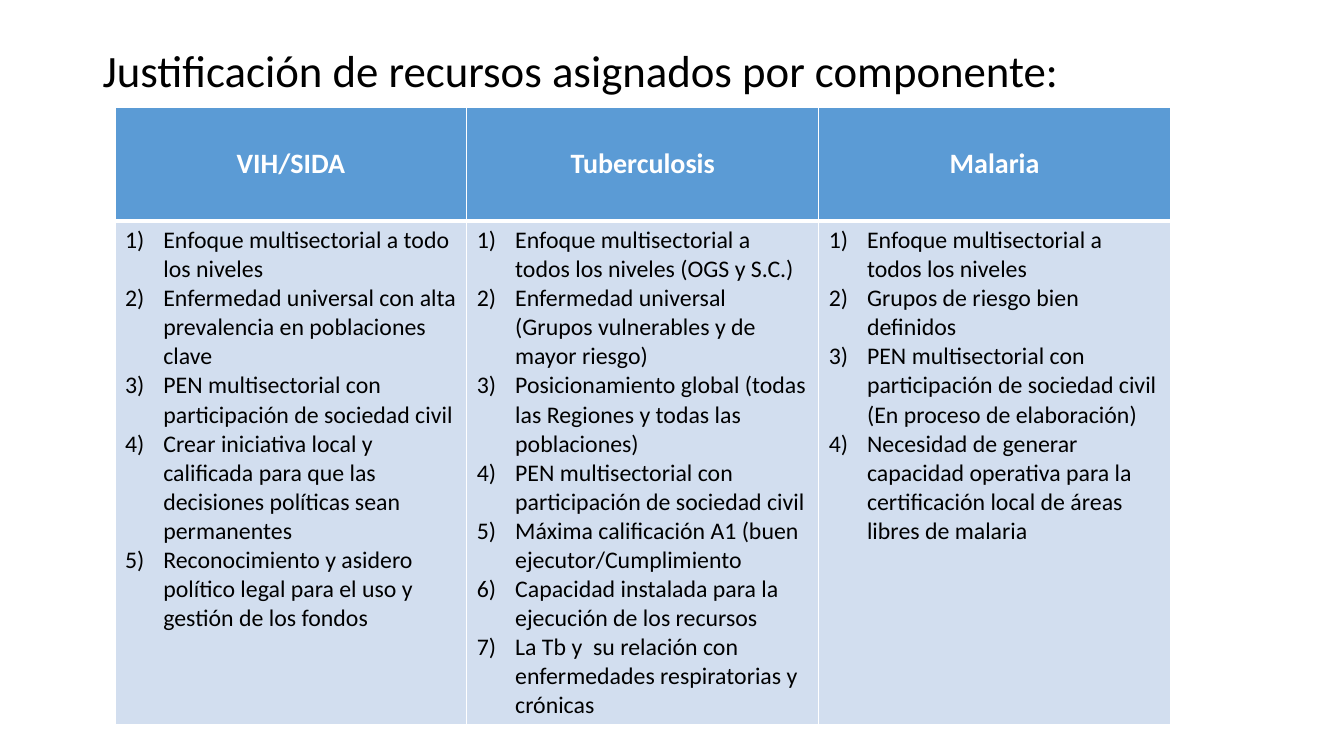
import pptx
import pptx.dml.color
import pptx.enum.text
import pptx.oxml
import pptx.oxml.ns
import pptx.util
from lxml import etree

TITLE = "Justificación de recursos asignados por componente:"
COMPONENTS = {
    "VIH/SIDA": [
        "Enfoque multisectorial a todo los niveles",
        "Enfermedad universal con alta prevalencia en poblaciones clave",
        "PEN multisectorial con participación de sociedad civil",
        "Crear iniciativa local y calificada para que las decisiones políticas sean permanentes",
        "Reconocimiento y asidero político legal para el uso y gestión de los fondos",
    ],
    "Tuberculosis": [
        "Enfoque multisectorial a todos los niveles (OGS y S.C.)",
        "Enfermedad universal (Grupos vulnerables y de mayor riesgo)",
        "Posicionamiento global (todas las Regiones y todas las poblaciones)",
        "PEN multisectorial con participación de sociedad civil",
        "Máxima calificación A1 (buen ejecutor/Cumplimiento",
        "Capacidad instalada para la ejecución de los recursos",
        "La Tb y  su relación con enfermedades respiratorias y crónicas",
    ],
    "Malaria": [
        "Enfoque multisectorial a todos los niveles",
        "Grupos de riesgo bien definidos",
        "PEN multisectorial con participación de sociedad civil (En proceso de elaboración)",
        "Necesidad de generar capacidad operativa para la certificación local de áreas libres de malaria",
    ],
}
COLORS = {"text": "000000", "white": "FFFFFF", "header": "5B9BD5", "body": "D2DEEF"}
FONT = "Calibri"
TABLE_LEFT, TABLE_TOP = 1.14, 1.07
COLUMN_WIDTH = 3.49
ROW_HEIGHTS = [1.12, 5]
NUMBER_INDENT = 0.38

inches = pptx.util.Inches
ALIGN = pptx.enum.text.PP_ALIGN
ANCHOR = pptx.enum.text.MSO_ANCHOR


def rgb(name):
    return pptx.dml.color.RGBColor.from_string(COLORS[name])


def write(frame, lines, size, color="text", bold=False, align=ALIGN.LEFT,
          numbered=False, spacing=1.0):
    """Fill a text frame with one paragraph per line."""
    frame.word_wrap = True
    for index, line in enumerate(lines):
        para = frame.add_paragraph() if index else frame.paragraphs[0]
        para.alignment = align
        para.line_spacing = spacing
        span = para.add_run()
        span.text = line
        span.font.name = FONT
        span.font.size = pptx.util.Pt(size)
        span.font.bold = bold
        span.font.color.rgb = rgb(color)
        if numbered:
            properties = para._p.get_or_add_pPr()
            indent = inches(NUMBER_INDENT)
            properties.set("marL", str(indent))
            properties.set("indent", str(-indent))
            bullet = etree.SubElement(properties, pptx.oxml.ns.qn("a:buAutoNum"))
            bullet.set("type", "arabicParenR")


def set_borders(cell, **widths):
    """Draw white borders; widths in points by side (L, R, T, B)."""
    properties = cell._tc.get_or_add_tcPr()
    for position, (side, width) in enumerate(widths.items()):
        properties.insert(position, pptx.oxml.parse_xml(
            f'<a:ln{side} {pptx.oxml.ns.nsdecls("a")} w="{pptx.util.Pt(width)}">'
            f'<a:solidFill><a:srgbClr val="{COLORS["white"]}"/></a:solidFill></a:ln{side}>'))


deck = pptx.Presentation()
deck.slide_width, deck.slide_height = inches(13.33), inches(7.5)
page = deck.slides.add_slide(deck.slide_layouts[6])

# Title
title = page.shapes.add_textbox(inches(0.92), 0, inches(11.5), inches(1.45))
title.text_frame.vertical_anchor = ANCHOR.MIDDLE
write(title.text_frame, [TITLE], size=32, spacing=0.9)

# Table of components
table = page.shapes.add_table(
    len(ROW_HEIGHTS), len(COMPONENTS), inches(TABLE_LEFT), inches(TABLE_TOP),
    inches(COLUMN_WIDTH * len(COMPONENTS)), inches(sum(ROW_HEIGHTS))).table
for row, height in zip(table.rows, ROW_HEIGHTS):
    row.height = inches(height)

for column, (component, reasons) in enumerate(COMPONENTS.items()):
    table.columns[column].width = inches(COLUMN_WIDTH)
    header, body = table.cell(0, column), table.cell(1, column)
    for cell, fill in ((header, "header"), (body, "body")):
        cell.fill.solid()
        cell.fill.fore_color.rgb = rgb(fill)
    header.vertical_anchor = ANCHOR.MIDDLE
    write(header.text_frame, [component], size=20, color="white", bold=True,
          align=ALIGN.CENTER)
    write(body.text_frame, reasons, size=17, numbered=True)
    set_borders(header, L=1, R=1, T=1, B=3)
    set_borders(body, L=1, R=1, T=3, B=1)

deck.save("out.pptx")
